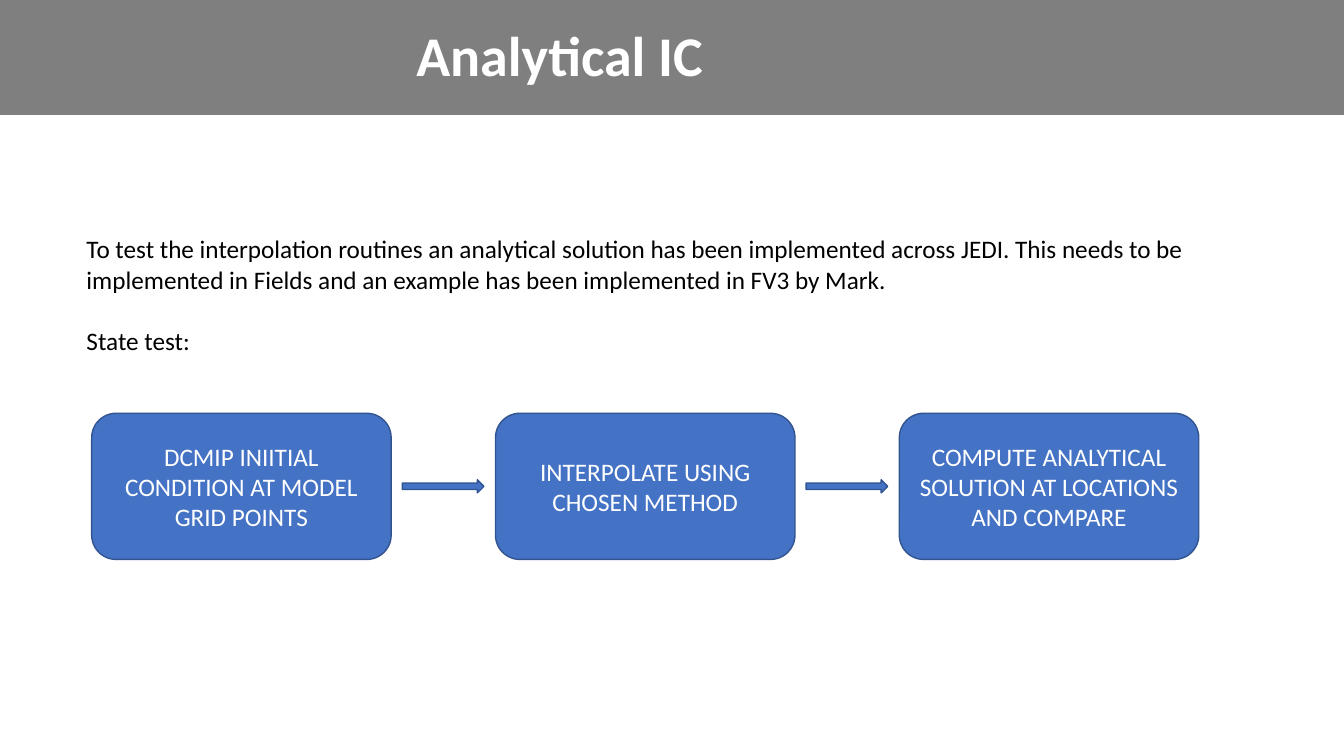
from pptx import Presentation
from pptx.dml.color import RGBColor
from pptx.enum.shapes import MSO_SHAPE as Shape
from pptx.enum.text import MSO_ANCHOR as Anchor, PP_ALIGN as Align
from pptx.util import Inches, Pt

WHITE = RGBColor(0xFF, 0xFF, 0xFF)
BLACK = RGBColor(0x00, 0x00, 0x00)
GRAY = RGBColor(0x7F, 0x7F, 0x7F)
BLUE = RGBColor(0x44, 0x72, 0xC4)
DARK_BLUE = RGBColor(0x32, 0x54, 0x91)

STEPS = [
    "DCMIP INIITIAL CONDITION AT MODEL GRID POINTS",
    "INTERPOLATE USING CHOSEN METHOD",
    "COMPUTE ANALYTICAL SOLUTION AT LOCATIONS AND COMPARE",
]
INTRO = [
    "To test the interpolation routines an analytical solution has been implemented across JEDI. "
    "This needs to be implemented in Fields and an example has been implemented in FV3 by Mark.",
    "State test:",
]
STEP_LEFT, STEP_PITCH = 0.91, 4.005


def add_block(kind, left, top, width, height, fill, line=None):
    shape = slide.shapes.add_shape(kind, Inches(left), Inches(top), Inches(width), Inches(height))
    shape.shadow.inherit = False
    shape.fill.solid()
    shape.fill.fore_color.rgb = fill
    if line is None:
        shape.line.fill.background()
    else:
        shape.line.color.rgb = line
        shape.line.width = Pt(1)
    return shape


def write(paragraph, text, size, color, bold=False):
    paragraph.text = text
    paragraph.font.name = "Calibri"
    paragraph.font.size = Pt(size)
    paragraph.font.bold = bold
    paragraph.font.color.rgb = color


presentation = Presentation()
presentation.slide_width = Inches(13.33)
presentation.slide_height = Inches(7.5)
slide = presentation.slides.add_slide(presentation.slide_layouts[6])

add_block(Shape.RECTANGLE, -0.03, -0.02, 13.37, 1.16, GRAY)

title = slide.shapes.add_textbox(Inches(0.22), Inches(0.12), Inches(10.66), Inches(0.91))
title.text_frame.word_wrap = True
title.text_frame.vertical_anchor = Anchor.MIDDLE
heading = title.text_frame.paragraphs[0]
heading.alignment = Align.CENTER
heading.line_spacing = 0.9
write(heading, "Analytical IC", 40, WHITE, bold=True)

intro = slide.shapes.add_textbox(Inches(0.76), Inches(2.27), Inches(12.06), Inches(1.31))
intro.text_frame.word_wrap = True
write(intro.text_frame.paragraphs[0], INTRO[0], 18, BLACK)
state_test = intro.text_frame.add_paragraph()
state_test.space_before = Pt(22)
write(state_test, INTRO[1], 18, BLACK)

for index, step in enumerate(STEPS):
    left = STEP_LEFT + index * STEP_PITCH
    box = add_block(Shape.ROUNDED_RECTANGLE, left, 4.1, 2.97, 1.45, BLUE, DARK_BLUE)
    box.text_frame.word_wrap = True
    box.text_frame.vertical_anchor = Anchor.MIDDLE
    paragraph = box.text_frame.paragraphs[0]
    paragraph.alignment = Align.CENTER
    write(paragraph, step, 18, WHITE)
    if index < len(STEPS) - 1:
        add_block(Shape.RIGHT_ARROW, left + 3.08, 4.76, 0.81, 0.13, BLUE, DARK_BLUE)

presentation.save("out.pptx")
